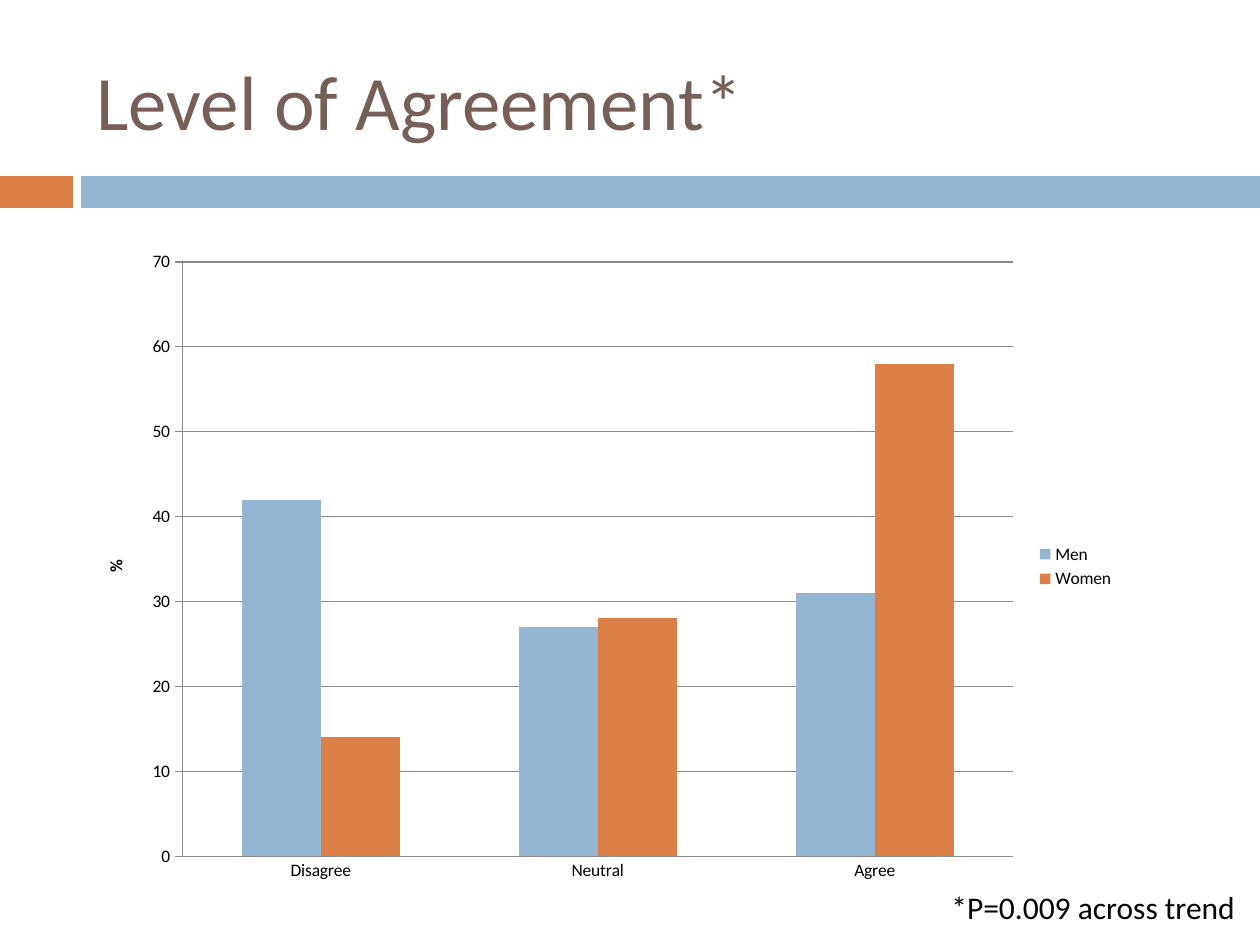
from pptx import Presentation
from pptx.chart.data import CategoryChartData
from pptx.dml.color import RGBColor
from pptx.enum.chart import XL_CHART_TYPE as ChartType, XL_LEGEND_POSITION as LegendSpot, XL_TICK_MARK as Tick
from pptx.enum.shapes import MSO_SHAPE as Shape
from pptx.enum.text import MSO_ANCHOR as Anchor, MSO_AUTO_SIZE as AutoSize, PP_ALIGN as Align
from pptx.util import Emu, Pt

PX = 914400 // 126
FONT = "Calibri"
COLORS = {
    "men": "94B6D2",
    "women": "DD8047",
    "title": "775F55",
    "text": "000000",
    "grid": "8B8B8B",
    "background": "FFFFFF",
}
CATEGORIES = ["Disagree", "Neutral", "Agree"]
AGREEMENT = {"Men": (42, 27, 31), "Women": (14, 28, 58)}


def color(name):
    """Return the named colour of the palette."""
    return RGBColor.from_string(COLORS[name])


def place(*lengths):
    """Turn px lengths into EMU."""
    return [Emu(length * PX) for length in lengths]


def style(font, size, name, bold=False):
    """Set face, size, colour and weight of a font."""
    font.name = FONT
    font.size = Pt(size)
    font.bold = bold
    font.color.rgb = color(name)


def add_band(slide, left, top, width, height):
    """Draw the two-coloured band below the title."""
    accent, gap = 73, 8
    start = accent + gap
    for offset, length, fill in ((0, accent, "women"), (start, width - start, "men")):
        bar = slide.shapes.add_shape(Shape.RECTANGLE, *place(left + offset, top, length, height))
        bar.shadow.inherit = False
        bar.fill.solid()
        bar.fill.fore_color.rgb = color(fill)
        bar.line.fill.background()


def add_title(slide, left, top, width, height):
    """Fill and move the title placeholder."""
    title = slide.shapes.title
    title.left, title.top, title.width, title.height = place(left, top, width, height)
    frame = title.text_frame
    frame.vertical_anchor = Anchor.MIDDLE
    frame.paragraphs[0].alignment = Align.LEFT
    heading = frame.paragraphs[0].add_run()
    heading.text = "Level of Agreement*"
    style(heading.font, 44, "title")


def add_agreement_chart(slide, left, top, width, height):
    """Compare the answers of men and women in clustered columns."""
    answers = CategoryChartData(number_format="General")
    answers.categories = CATEGORIES
    for group, shares in AGREEMENT.items():
        answers.add_series(group, shares)
    chart = slide.shapes.add_chart(
        ChartType.COLUMN_CLUSTERED, *place(left, top, width, height), answers
    ).chart
    style(chart.font, 10, "text")
    chart.has_title = False
    chart.has_legend = True
    chart.legend.position = LegendSpot.RIGHT
    chart.legend.include_in_layout = False

    columns = chart.plots[0]
    columns.gap_width = 150
    columns.overlap = 0
    columns.vary_by_categories = False
    for group in columns.series:
        group.invert_if_negative = False
        group.format.fill.solid()
        group.format.fill.fore_color.rgb = color(group.name.lower())

    answer_axis, share_axis = chart.category_axis, chart.value_axis
    answer_axis.major_tick_mark = Tick.NONE
    share_axis.major_tick_mark = Tick.OUTSIDE
    share_axis.minimum_scale, share_axis.maximum_scale, share_axis.major_unit = 0, 70, 10
    share_axis.has_major_gridlines = True
    for lined in (answer_axis, share_axis, share_axis.major_gridlines):
        lined.format.line.color.rgb = color("grid")
        lined.format.line.width = Pt(0.75)
    unit = share_axis.axis_title.text_frame.paragraphs[0].add_run()
    unit.text = "%"
    style(unit.font, 10, "text", bold=True)


def add_footnote(slide, left, top, width, height):
    """Write the significance note below the chart."""
    frame = slide.shapes.add_textbox(*place(left, top, width, height)).text_frame
    frame.word_wrap = False
    frame.auto_size = AutoSize.SHAPE_TO_FIT_TEXT
    note = frame.paragraphs[0].add_run()
    note.text = "*P=0.009 across trend"
    style(note.font, 18, "text")


def main():
    """Build and save the slide."""
    deck = Presentation()
    deck.slide_width, deck.slide_height = place(1260, 945)
    slide = deck.slides.add_slide(deck.slide_layouts[5])
    slide.background.fill.solid()
    slide.background.fill.fore_color.rgb = color("background")
    add_band(slide, 0, 176, 1260, 32)
    add_title(slide, 84, 32, 1124, 136)
    add_agreement_chart(slide, 79, 239, 1048, 655)
    add_footnote(slide, 939, 882, 315, 50)
    deck.save("out.pptx")


if __name__ == "__main__":
    main()
